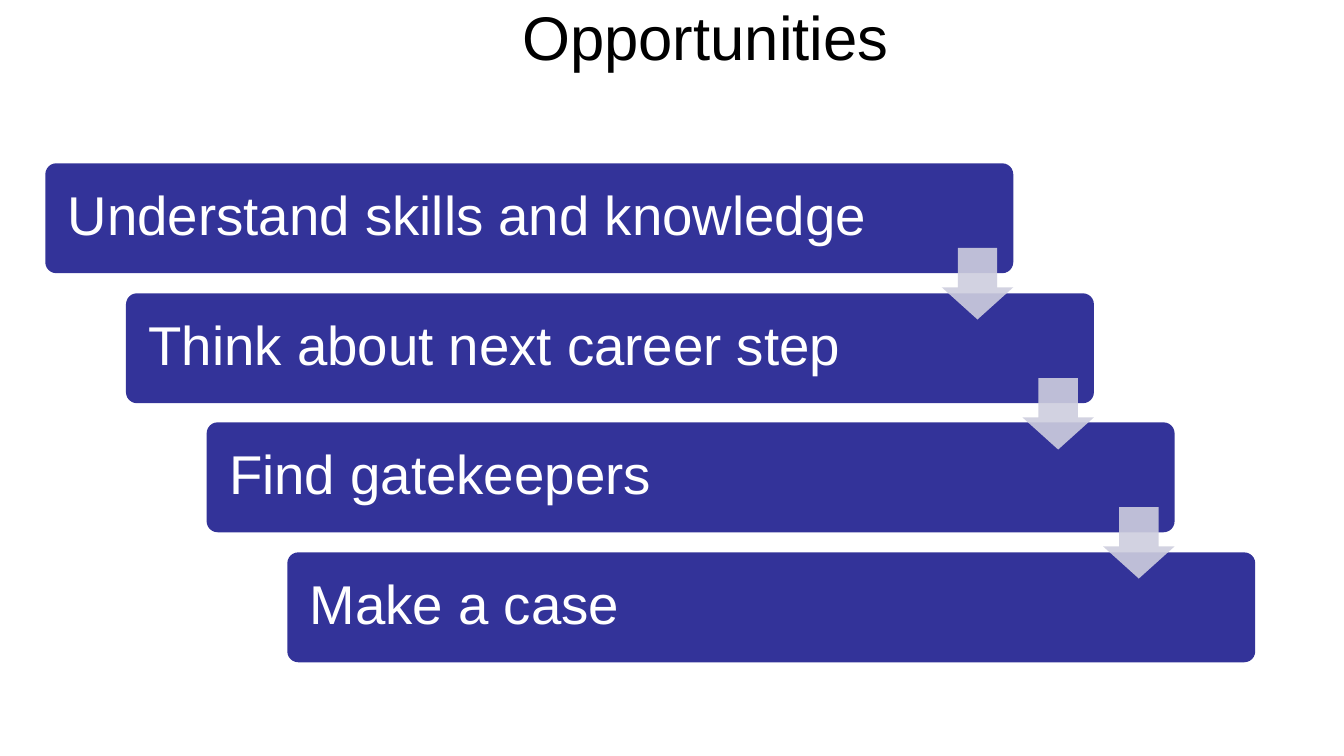
from dataclasses import dataclass

from lxml.etree import SubElement
from pptx import Presentation
from pptx.dml.color import RGBColor
from pptx.enum.shapes import MSO_SHAPE
from pptx.enum.text import MSO_ANCHOR, PP_ALIGN
from pptx.oxml.ns import qn
from pptx.util import Pt

SCALE = 9144


@dataclass(frozen=True)
class Theme:
    """Colours and type sizes of the slide."""
    font: str = "Arial"
    ink: str = "000000"
    bar: str = "333399"
    label: str = "FFFFFF"
    arrow: str = "CECEDE"
    alpha: int = 90
    head: int = 44
    body: int = 39


THEME = Theme()
STEPS = [
    "Understand skills and knowledge",
    "Think about next career step",
    "Find gatekeepers",
    "Make a case",
]


def px(*vals):
    """Turn px lengths into EMU."""
    return [val * SCALE for val in vals]


def write(shape, text, size, color, align, inset):
    """Set one styled paragraph, centred vertically in the shape."""
    frame = shape.text_frame
    frame.text = text
    frame.word_wrap = True
    frame.vertical_anchor = MSO_ANCHOR.MIDDLE
    frame.margin_left, frame.margin_right = px(inset, inset)
    para = frame.paragraphs[0]
    para.alignment = align
    font = para.runs[0].font
    font.name = THEME.font
    font.size = Pt(size)
    font.color.rgb = RGBColor.from_string(color)
    return para


def draw(slide, kind, box, color, adjust):
    """Add a flat preset shape with no outline."""
    shape = slide.shapes.add_shape(kind, *px(*box))
    shape.shadow.inherit = False
    shape.fill.solid()
    shape.fill.fore_color.rgb = RGBColor.from_string(color)
    shape.line.fill.background()
    for i, val in enumerate(adjust):
        shape.adjustments[i] = val
    return shape


def add_title(slide, box):
    """Place the slide title in the box."""
    title = slide.shapes.add_textbox(*px(*box))
    write(title, "Opportunities", THEME.head, THEME.ink, PP_ALIGN.CENTER, 10)


def add_bar(slide, box, text):
    """Place one labelled step bar in the box."""
    bar = draw(slide, MSO_SHAPE.ROUNDED_RECTANGLE, box, THEME.bar, [0.1])
    para = write(bar, text, THEME.body, THEME.label, PP_ALIGN.LEFT, 19)
    para.line_spacing = 0.9


def add_arrow(slide, box):
    """Place one translucent down arrow in the box."""
    arrow = draw(slide, MSO_SHAPE.DOWN_ARROW, box, THEME.arrow, [0.55, 0.45])
    tint = arrow.fill._xPr.find(qn("a:solidFill"))[0]
    SubElement(tint, qn("a:alpha")).set("val", str(THEME.alpha * 1000))


def add_stairs(slide, box):
    """Lay the steps down the box as stairs linked by arrows."""
    left, top, width, height = box
    wide, tall, side = 960, 109, 71
    last = len(STEPS) - 1
    spots = [
        (left + round(i * (width - wide) / last),
         top + round(i * (height - tall) / last))
        for i in range(len(STEPS))
    ]
    for (x, y), text in zip(spots, STEPS):
        add_bar(slide, (x, y, wide, tall), text)
    for x, y in spots[:-1]:
        add_arrow(slide, (x + wide - side, y + tall - 25, side, side))


def main():
    """Build and save the slide."""
    deck = Presentation()
    deck.slide_width, deck.slide_height = px(1333, 750)
    slide = deck.slides.add_slide(deck.slide_layouts[6])
    add_title(slide, (100, -27, 1200, 125))
    add_stairs(slide, (45, 162, 1200, 495))
    deck.save("out.pptx")


if __name__ == "__main__":
    main()
